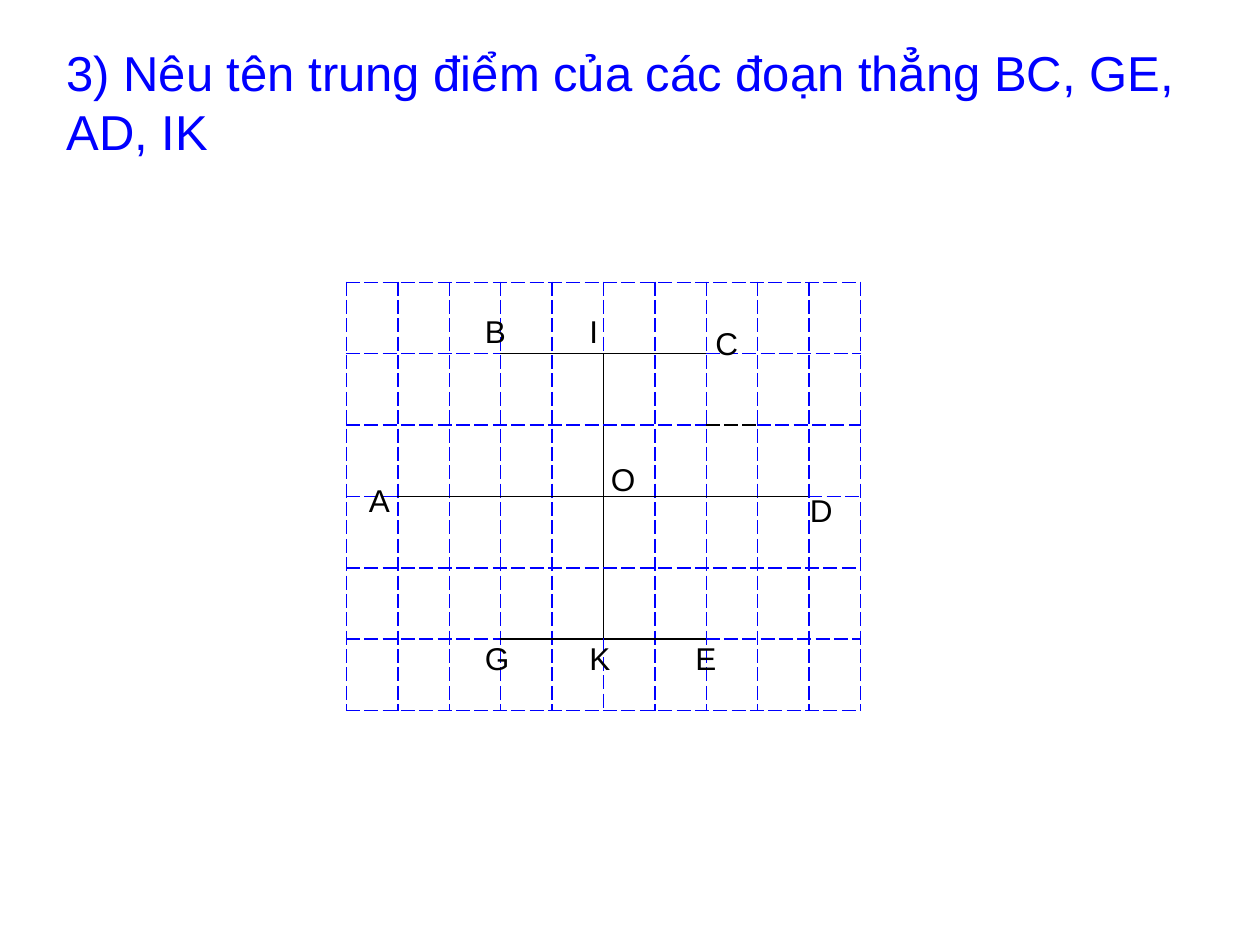
from lxml.etree import SubElement
from pptx import Presentation
from pptx.dml.color import RGBColor
from pptx.enum.text import MSO_AUTO_SIZE
from pptx.oxml.ns import qn
from pptx.util import Inches, Pt

# Content
QUESTION = "3) Nêu tên trung điểm của các đoạn thẳng BC, GE, AD, IK"
POINTS = [  # letter, left, top
    ("B", 3.75, 2.43), ("I", 4.58, 2.43), ("C", 5.58, 2.52),
    ("A", 2.83, 3.77), ("O", 4.75, 3.6), ("D", 6.33, 3.85),
    ("G", 3.75, 5.02), ("K", 4.58, 5.02), ("E", 5.42, 5.02),
]
# Segments on grid lines: (grid line, first cell, end cell)
HORIZONTAL_SEGMENTS = [(1, 3, 7), (3, 1, 9), (5, 3, 7)]  # BC, AD, GE
VERTICAL_SEGMENTS = [(5, 1, 5)]  # IK
BLACK_DASH = (2, 7, 8)

GRID_LEFT, GRID_TOP, GRID_WIDTH, GRID_HEIGHT = 2.75, 2.24, 4.08, 3.4
ROWS, COLUMNS = 6, 10
BLUE, BLACK = "0000FF", "000000"


def color(hex_code):
    return RGBColor.from_string(hex_code)


def covers(segment, line, cell):
    return segment[0] == line and segment[1] <= cell < segment[2]


def edge_style(line, cell, segments, black_dashes=()):
    if any(covers(segment, line, cell) for segment in segments):
        return BLACK, "solid"
    if any(covers(dash, line, cell) for dash in black_dashes):
        return BLACK, "sysDash"
    return BLUE, "sysDash"


def add_border(cell, position, side, style):
    properties = cell._tc.get_or_add_tcPr()
    border = SubElement(properties, qn(f"a:{side}"), w=str(Pt(1)))
    properties.insert(position, border)
    fill = SubElement(border, qn("a:solidFill"))
    SubElement(fill, qn("a:srgbClr"), val=style[0])
    SubElement(border, qn("a:prstDash"), val=style[1])


def add_label(slide, text, left, top, width, height, size, hex_code):
    label = slide.shapes.add_textbox(*map(Inches, (left, top, width, height)))
    frame = label.text_frame
    frame.word_wrap = True
    frame.auto_size = MSO_AUTO_SIZE.SHAPE_TO_FIT_TEXT
    run = frame.paragraphs[0].add_run()
    run.text = text
    for name, value in {"name": "Arial", "size": Pt(size)}.items():
        setattr(run.font, name, value)
    run.font.color.rgb = color(hex_code)


def add_grid(slide):
    box = map(Inches, (GRID_LEFT, GRID_TOP, GRID_WIDTH, GRID_HEIGHT))
    grid = slide.shapes.add_table(ROWS, COLUMNS, *box).table
    for name, value in {"first_row": False, "horz_banding": False}.items():
        setattr(grid, name, value)
    for column in grid.columns:
        column.width = Inches(GRID_WIDTH / COLUMNS)
    for row in grid.rows:
        row.height = Inches(GRID_HEIGHT / ROWS)

    # Cells on both sides of a grid line share its style
    for r in range(ROWS):
        for c in range(COLUMNS):
            cell = grid.cell(r, c)
            cell.fill.background()
            borders = {
                "lnL": edge_style(c, r, VERTICAL_SEGMENTS),
                "lnR": edge_style(c + 1, r, VERTICAL_SEGMENTS),
                "lnT": edge_style(r, c, HORIZONTAL_SEGMENTS, [BLACK_DASH]),
                "lnB": edge_style(r + 1, c, HORIZONTAL_SEGMENTS, [BLACK_DASH]),
            }
            for position, (side, style) in enumerate(borders.items()):
                add_border(cell, position, side, style)


def main():
    deck = Presentation()
    deck.slide_width, deck.slide_height = Inches(10), Inches(7.5)
    slide = deck.slides.add_slide(deck.slide_layouts[6])

    # Grid, point letters, question
    add_grid(slide)
    for letter, left, top in POINTS:
        add_label(slide, letter, left, top, 0.42, 0.4, 18, BLACK)
    add_label(slide, QUESTION, 0.43, 0.29, 9.13, 1.04, 28, BLUE)

    deck.save("out.pptx")


if __name__ == "__main__":
    main()
